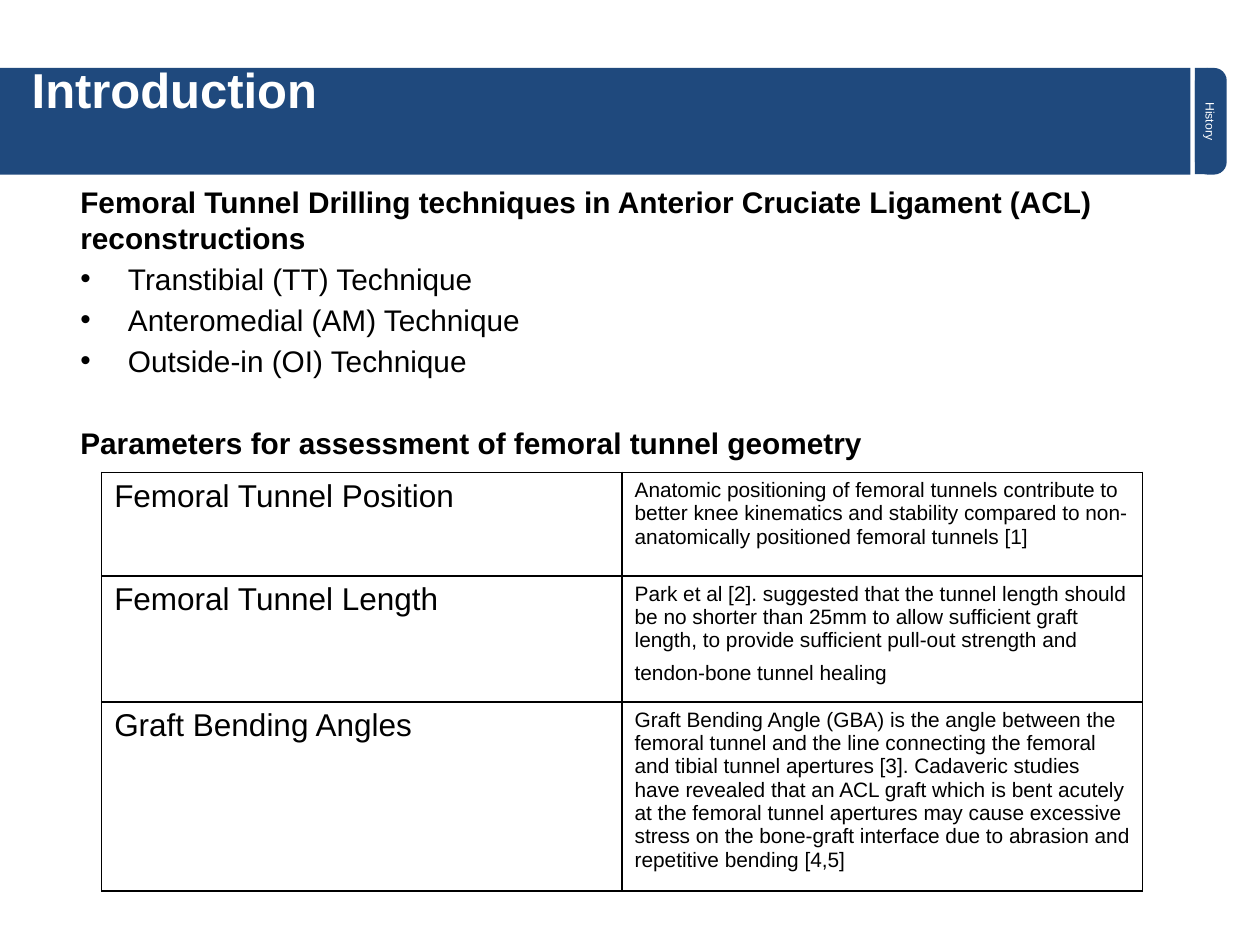
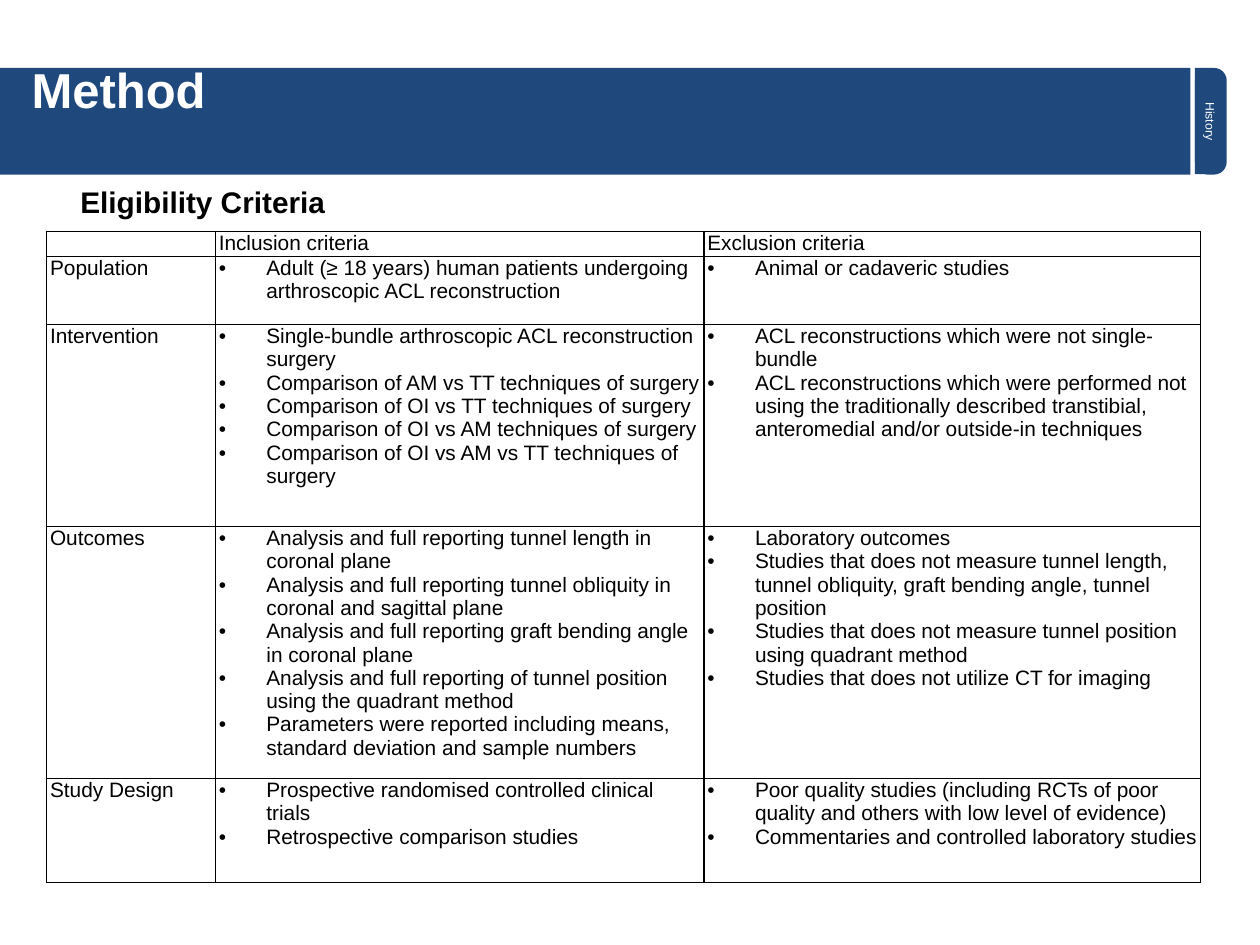
from dataclasses import dataclass

from lxml.etree import SubElement
from pptx import Presentation
from pptx.dml.color import RGBColor
from pptx.enum.shapes import MSO_SHAPE
from pptx.enum.text import MSO_ANCHOR, MSO_AUTO_SIZE, PP_ALIGN
from pptx.oxml.ns import qn
from pptx.util import Cm, Pt


@dataclass(frozen=True)
class Theme:
    font: str = "Arial"
    band: RGBColor = RGBColor(0x1F, 0x49, 0x7D)
    ink: RGBColor = RGBColor(0, 0, 0)
    light: RGBColor = RGBColor(255, 255, 255)
    title_size: float = 28
    body_size: float = 17
    label_size: float = 18
    cell_size: float = 11.9
    tab_size: float = 7
    body_gap: float = 3
    section_gap: float = 26.4
    rule: float = 1


THEME = Theme()

# Boxes are left, top, width, height in centimetres
TITLE_BAND = (0, 1.37, 24, 2.15)
SECTION_TAB = (24.09, 1.37, 0.64, 2.15)
BODY = (1.49, 3.58, 22.5, 15.8)
INDENT = Cm(0.96)

TECHNIQUES_HEADING = ("Femoral Tunnel Drilling techniques in Anterior Cruciate "
                      "Ligament (ACL) reconstructions")
TECHNIQUES = [
    "Transtibial (TT) Technique",
    "Anteromedial (AM) Technique",
    "Outside-in (OI) Technique",
]
PARAMETERS_HEADING = "Parameters for assessment of femoral tunnel geometry"
PARAMETERS = [
    ("Femoral Tunnel Position",
     "Anatomic positioning of femoral tunnels contribute to better knee kinematics "
     "and stability compared to non-anatomically positioned femoral tunnels [1]"),
    ("Femoral Tunnel Length",
     "Park et al [2]. suggested that the tunnel length should be no shorter than "
     "25mm to allow sufficient graft length, to provide sufficient pull-out strength "
     "and tendon-bone tunnel healing"),
    ("Graft Bending Angles",
     "Graft Bending Angle (GBA) is the angle between the femoral tunnel and the line "
     "connecting the femoral and tibial tunnel apertures [3]. Cadaveric studies have "
     "revealed that an ACL graft which is bent acutely at the femoral tunnel apertures "
     "may cause excessive stress on the bone-graft interface due to abrasion and "
     "repetitive bending [4,5]"),
]

CRITERIA_HEADER = ("", "Inclusion criteria", "Exclusion criteria")
CRITERIA = [
    ("Population",
     ["Adult (≥ 18 years) human patients undergoing arthroscopic ACL reconstruction"],
     ["Animal or cadaveric studies"]),
    ("Intervention",
     ["Single-bundle arthroscopic ACL reconstruction surgery",
      "Comparison of AM vs TT techniques of surgery",
      "Comparison of OI vs TT techniques of surgery",
      "Comparison of OI vs AM techniques of surgery",
      "Comparison of OI vs AM vs TT techniques of surgery"],
     ["ACL reconstructions which were not single-bundle",
      "ACL reconstructions which were performed not using the traditionally "
      "described transtibial, anteromedial and/or outside-in techniques"]),
    ("Outcomes",
     ["Analysis and full reporting tunnel length in coronal plane",
      "Analysis and full reporting tunnel obliquity in coronal and sagittal plane",
      "Analysis and full reporting graft bending angle in coronal plane",
      "Analysis and full reporting of tunnel position using the quadrant method",
      "Parameters were reported including means, standard deviation and sample numbers"],
     ["Laboratory outcomes",
      "Studies that does not measure tunnel length, tunnel obliquity, graft bending "
      "angle, tunnel position",
      "Studies that does not measure tunnel position using quadrant method",
      "Studies that does not utilize CT for imaging"]),
    ("Study Design",
     ["Prospective randomised controlled clinical trials",
      "Retrospective comparison studies"],
     ["Poor quality studies (including RCTs of poor quality and others with low "
      "level of evidence)",
      "Commentaries and controlled laboratory studies"]),
]


def style_span(span, size, color=THEME.ink, bold=False):
    span.font.name = THEME.font
    span.font.size = Pt(size)
    span.font.color.rgb = color
    span.font.bold = bold


def write_lines(frame, lines, size, color=THEME.ink, bold=False, bullets=False):
    """Fill a text frame with one paragraph per line."""
    frame.text = "\n".join(lines)
    for para in frame.paragraphs:
        if bullets:
            add_bullet(para)
        for span in para.runs:
            style_span(span, size, color, bold)


def add_bullet(para):
    properties = para._p.get_or_add_pPr()
    properties.set("marL", str(INDENT))
    properties.set("indent", str(-INDENT))
    SubElement(properties, qn("a:buFont"), typeface=THEME.font)
    SubElement(properties, qn("a:buChar"), char="•")


def set_margins(target, sides, ends):
    target.margin_left = target.margin_right = Cm(sides)
    target.margin_top = target.margin_bottom = Cm(ends)


def add_text_box(page, box, margin=0.0):
    text_box = page.shapes.add_textbox(*map(Cm, box))
    text_box.text_frame.word_wrap = True
    set_margins(text_box.text_frame, margin, margin)
    return text_box


def add_block(shapes, kind, box):
    block = shapes.add_shape(kind, *map(Cm, box))
    block.shadow.inherit = False
    block.fill.solid()
    block.fill.fore_color.rgb = THEME.band
    block.line.fill.background()
    return block


def add_section_tab(page, box, label):
    left, top, width, height = box
    # Rounded on the right, squared off on the left
    tab = page.shapes.add_group_shape()
    rounded = add_block(tab.shapes, MSO_SHAPE.ROUNDED_RECTANGLE, box)
    rounded.adjustments[0] = 0.4
    add_block(tab.shapes, MSO_SHAPE.RECTANGLE, (left, top, 0.25, height - 0.01))
    # Label turned to run down the tab
    label_width, label_height = 0.81, 0.36
    text_box = add_text_box(page, (left + (width - label_width) / 2 - 0.04,
                                   top + (height - label_height) / 2,
                                   label_width, label_height))
    text_box.rotation = 90
    frame = text_box.text_frame
    frame.word_wrap = False
    frame.auto_size = MSO_AUTO_SIZE.SHAPE_TO_FIT_TEXT
    write_lines(frame, [label], THEME.tab_size, THEME.light)
    frame.paragraphs[0].alignment = PP_ALIGN.CENTER


def add_title_band(page, box, title):
    left, top, width, _ = box
    add_block(page.shapes, MSO_SHAPE.RECTANGLE, box)
    frame = add_text_box(page, (left + 0.64, top, width - 1.6, 1.04)).text_frame
    frame.auto_size = MSO_AUTO_SIZE.SHAPE_TO_FIT_TEXT
    write_lines(frame, [title], THEME.title_size, THEME.light, bold=True)
    frame.paragraphs[0].line_spacing = 0.87


def add_body(page, box, headings, items=()):
    """Write the first heading, the bulleted items, then any further headings."""
    frame = add_text_box(page, box, margin=0.13).text_frame
    first, *others = headings
    write_lines(frame, [first, *items, *others], THEME.body_size)
    for index, para in enumerate(frame.paragraphs):
        is_item = 0 < index <= len(items)
        if is_item:
            add_bullet(para)
        if index:
            para.space_before = Pt(THEME.body_gap if is_item else THEME.section_gap)
        para.runs[0].font.bold = not is_item


def add_borders(cell):
    properties = cell._tc.get_or_add_tcPr()
    # Border lines come before the fill
    for position, side in enumerate(("lnL", "lnR", "lnT", "lnB")):
        line = SubElement(properties, qn(f"a:{side}"), w=str(Pt(THEME.rule)))
        fill = SubElement(line, qn("a:solidFill"))
        SubElement(fill, qn("a:srgbClr"), val=str(THEME.ink))
        properties.insert(position, line)


def add_grid(page, corner, widths, heights):
    """Add an unfilled table with ruled cells."""
    size = (sum(widths), sum(heights))
    frame = page.shapes.add_table(len(heights), len(widths), *map(Cm, corner + size))
    table = frame.table
    table.first_row = table.horz_banding = False
    for column, width in zip(table.columns, widths):
        column.width = Cm(width)
    for row, height in zip(table.rows, heights):
        row.height = Cm(height)
    for cell in table.iter_cells():
        cell.fill.background()
        cell.vertical_anchor = MSO_ANCHOR.TOP
        add_borders(cell)
    return table


def add_parameter_table(page, corner):
    table = add_grid(page, corner, (10.49, 10.49), (2.09, 2.54, 3.81))
    for row, (name, finding) in enumerate(PARAMETERS):
        write_lines(table.cell(row, 0).text_frame, [name], THEME.label_size)
        write_lines(table.cell(row, 1).text_frame, [finding], THEME.cell_size)
    # A larger closing space opens up the last line of the length finding
    span = table.cell(1, 1).text_frame.paragraphs[0].add_run()
    span.text = " "
    style_span(span, THEME.label_size)


def add_criteria_table(page, corner):
    table = add_grid(page, corner, (3.4, 9.85, 10.01), (0.5, 1.37, 4.07, 5.08, 2.09))
    for row, entries in enumerate([CRITERIA_HEADER, *CRITERIA]):
        for column, entry in enumerate(entries):
            cell = table.cell(row, column)
            set_margins(cell, 0.07, 0)
            is_list = isinstance(entry, list)
            write_lines(cell.text_frame, entry if is_list else [entry],
                        THEME.cell_size, bullets=is_list)
    # Keep the empty corner cell as low as its row
    corner_para = table.cell(0, 0).text_frame.paragraphs[0]
    SubElement(corner_para._p, qn("a:endParaRPr"), sz=str(int(THEME.cell_size * 100)))


def add_page(deck, title, headings, items=()):
    page = deck.slides.add_slide(deck.slide_layouts[6])
    add_body(page, BODY, headings, items)
    add_section_tab(page, SECTION_TAB, "History")
    add_title_band(page, TITLE_BAND, title)
    return page


def main():
    deck = Presentation()
    deck.slide_width, deck.slide_height = Cm(25.4), Cm(19.05)

    introduction = add_page(deck, "Introduction",
                            [TECHNIQUES_HEADING, PARAMETERS_HEADING], TECHNIQUES)
    add_parameter_table(introduction, (2.05, 9.52))

    method = add_page(deck, "Method", ["Eligibility Criteria"])
    add_criteria_table(method, (0.94, 4.67))

    deck.save("out.pptx")


if __name__ == "__main__":
    main()
